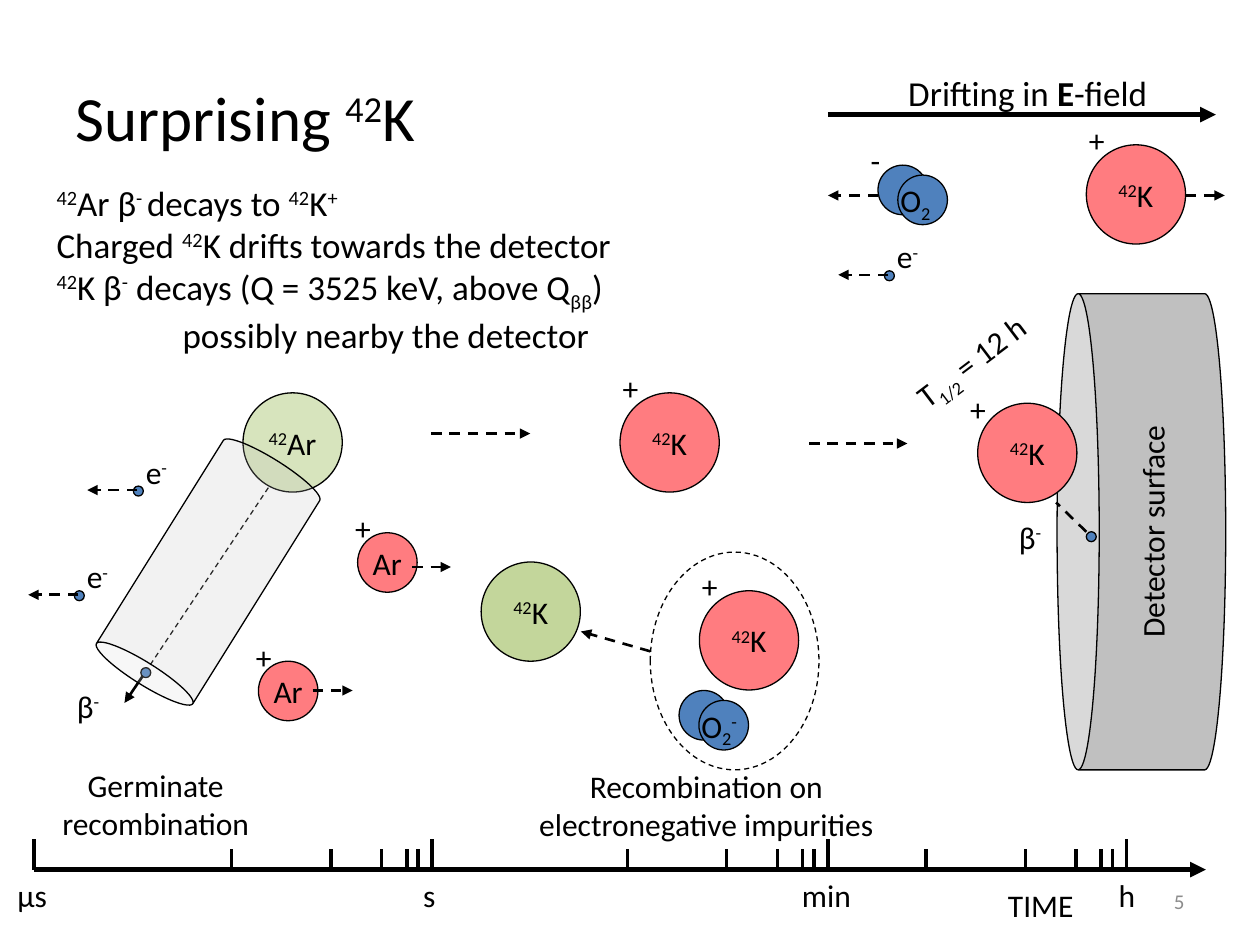
from lxml import etree
from pptx import Presentation
from pptx.dml.color import RGBColor
from pptx.enum.dml import MSO_LINE
from pptx.enum.shapes import MSO_CONNECTOR, MSO_SHAPE
from pptx.enum.text import MSO_ANCHOR, MSO_AUTO_SIZE, PP_ALIGN
from pptx.oxml.ns import qn
from pptx.util import Cm, Pt

LEFT, CENTER, RIGHT = PP_ALIGN.LEFT, PP_ALIGN.CENTER, PP_ALIGN.RIGHT
MIDDLE, TOP = MSO_ANCHOR.MIDDLE, MSO_ANCHOR.TOP
OVAL, CAN = MSO_SHAPE.OVAL, MSO_SHAPE.CAN
DASH = MSO_LINE.DASH

FONT = "Calibri"
BLACK, GREY, SILVER = "000000", "8C8C8C", "C0C0C0"
RED, GREEN, PALE_GREEN, BLUE = "FF7C80", "C3D69B", "D7E4BD", "4F81BD"

# In texts, | separates runs; a run starting with ^ is raised, _ lowered, * bold.
BASELINES = {"^": "30000", "_": "-25000"}
TITLE = "Surprising |^42|K"
DECAY_STEPS = [
    "|^42|Ar β|^- |decays to |^42|K|^+",
    "Charged |^42|K drifts towards the detector",
    "|^42|K β|^-| decays (Q = 3525 keV, above Q|_ββ|)",
    "possibly nearby the detector",
]

# All positions and sizes are in centimetres.
# lines, left, top, width, height, size, alignment, rotation
LABELS = [
    (["TIME"], 20.07, 17.73, 1.85, 1.02, 18, LEFT, 0),
    (["µs"], 0.1, 17.53, 1.12, 1.02, 18, LEFT, 0),
    (["s"], 8.28, 17.53, 0.76, 1.02, 18, LEFT, 0),
    (["min"], 15.9, 17.53, 1.52, 1.02, 18, CENTER, 0),
    (["h"], 22.3, 17.53, 0.86, 1.02, 18, LEFT, 0),
    (["Drifting in |*E|-field"], 18.06, 1.32, 5.41, 1.12, 20, LEFT, 0),
    (["Germinate", "recombination"], 0.89, 15.32, 4.5, 1.78, 18, CENTER, 0),
    (["Recombination on", "electronegative impurities"],
     10.57, 15.34, 7.34, 1.8, 18, CENTER, 0),
    (["-"], 17.3, 2.72, 0.71, 1.02, 18, LEFT, 0),
    (["β|^-"], 1.3, 13.72, 1.02, 1.02, 18, LEFT, 0),
    (["β|^-"], 20.29, 10.31, 1.02, 1.02, 18, LEFT, 0),
    (["T|_1/2| = 12 h"], 18.03, 6.73, 3.18, 1.02, 18, LEFT, 322.9),
]

# label, left, top, diameter, offset of the plus sign
POSITIVE_IONS = [
    ("|^42|K", 19.71, 8.13, 2, (-0.4, -0.4)),
    ("|^42|K", 14.1, 11.91, 2, (-0.2, -0.6)),
    ("|^42|K", 21.9, 2.92, 2, (-0.2, -0.6)),
    ("|^42|K", 12.5, 7.92, 2, (-0.2, -0.6)),
    ("Ar", 5.21, 13.33, 1.2, (-0.3, -0.6)),
    ("Ar", 7.21, 10.74, 1.2, (-0.3, -0.6)),
]
OXYGENS = [("O|_2|^-", 13.69, 13.92, 1.3), ("O|_2", 17.7, 3.33, 1.14)]
ELECTRONS = [(2.69, 9.8), (1.5, 11.91), (17.83, 5.46)]
DRIFTS = [
    (8.69, 8.74, 10.69, 8.74),
    (16.31, 8.94, 18.29, 8.94),
    (23.9, 3.94, 24.69, 3.94),
    (17.7, 3.94, 16.69, 3.94),
    (13.11, 13.13, 11.71, 12.73),
    (8.31, 11.43, 9.09, 11.43),
    (6.3, 13.92, 7.11, 13.92),
]

AXIS_Y = 17.53
MAJOR_TICKS = [0.69, 8.71, 16.69, 22.71]
MINOR_TICKS_BEFORE = [4.04, 2.04, 1.02, 0.51, 0.28]


def rgb(colour):
    return RGBColor.from_string(colour)


def write(frame, lines, size, align=LEFT, anchor=TOP, colour=BLACK):
    """Fill a text frame with marked-up lines."""
    frame.vertical_anchor = anchor
    for number, line in enumerate(lines):
        paragraph = frame.add_paragraph() if number else frame.paragraphs[0]
        paragraph.alignment = align
        paragraph.font.size = Pt(size)
        paragraph.font.name = FONT
        paragraph.font.color.rgb = rgb(colour)
        for part in filter(None, line.split("|")):
            run = paragraph.add_run()
            run.text = part.lstrip("^_*")
            if part[0] in BASELINES:
                run.font._element.set("baseline", BASELINES[part[0]])
            elif part[0] == "*":
                run.font.bold = True


def add_label(shapes, lines, left, top, width, height=1.02, size=18,
              align=LEFT, rotation=0):
    box = shapes.add_textbox(Cm(left), Cm(top), Cm(width), Cm(height))
    box.rotation = rotation
    box.text_frame.word_wrap = False
    box.text_frame.auto_size = MSO_AUTO_SIZE.SHAPE_TO_FIT_TEXT
    write(box.text_frame, lines, size, align)
    return box


def add_body(shapes, kind, left, top, width, height, fill=None, label=""):
    body = shapes.add_shape(kind, Cm(left), Cm(top), Cm(width), Cm(height))
    body.shadow.inherit = False
    if fill:
        body.fill.solid()
        body.fill.fore_color.rgb = rgb(fill)
    else:
        body.fill.background()
    body.line.color.rgb = rgb(BLACK)
    body.line.width = Pt(0.75)
    if label:
        body.text_frame.word_wrap = False
        write(body.text_frame, [label], 18, CENTER, MIDDLE)
    return body


def add_disc(shapes, left, top, diameter, fill, label=""):
    return add_body(shapes, OVAL, left, top, diameter, diameter, fill, label)


def add_line(shapes, x1, y1, x2, y2, width=1.5, dashed=False, arrow=False):
    line = shapes.add_connector(MSO_CONNECTOR.STRAIGHT, Cm(x1), Cm(y1), Cm(x2), Cm(y2))
    line.line.color.rgb = rgb(BLACK)
    line.line.width = Pt(width)
    if dashed:
        line.line.dash_style = DASH
    if arrow:
        etree.SubElement(line.line._get_or_add_ln(), qn("a:tailEnd"), type="triangle")
    etree.SubElement(line._element.spPr, qn("a:effectLst"))


def add_time_axis(shapes):
    add_line(shapes, MAJOR_TICKS[0], AXIS_Y, 24.31, AXIS_Y, 3, arrow=True)
    for x in MAJOR_TICKS:
        add_line(shapes, x, AXIS_Y - 0.61, x, AXIS_Y, 2)
    for major in MAJOR_TICKS[1:]:
        for before in MINOR_TICKS_BEFORE:
            add_line(shapes, major - before, AXIS_Y - 0.41, major - before, AXIS_Y, 2)


def add_particles(shapes):
    for label, left, top, diameter, (dx, dy) in POSITIVE_IONS:
        ion = shapes.add_group_shape().shapes
        add_disc(ion, left, top, diameter, RED, label)
        add_label(ion, ["+"], left + dx, top + dy, 0.85)
    for label, left, top, width in OXYGENS:
        molecule = shapes.add_group_shape().shapes
        add_disc(molecule, left, top, 1, BLUE)
        add_disc(molecule, left + 0.4, top + 0.2, 1, BLUE)
        add_label(molecule, [label], left + 0.2, top + 0.2, width)
    for left, top in ELECTRONS:
        electron = shapes.add_group_shape().shapes
        add_disc(electron, left, top, 0.2, BLUE)
        add_label(electron, ["e|^-"], left, top - 0.8, 0.97)
        add_line(shapes, left + 0.08, top + 0.08, left - 0.93, top + 0.08,
                 dashed=True, arrow=True)


def add_decay_track(shapes):
    """Beta track of the argon decay inside its ionisation cylinder."""
    add_line(shapes, 5.51, 9.68, 2.97, 13.49, 0.75, dashed=True)
    add_line(shapes, 2.97, 13.49, 2.51, 14.17, arrow=True)
    add_disc(shapes, 2.84, 13.46, 0.2, BLUE)
    add_disc(shapes, 4.9, 7.92, 2, PALE_GREEN, "|^42|Ar")
    cylinder = add_body(shapes, CAN, 3.05, 8.89, 2.29, 5.28, SILVER)
    cylinder.adjustments[0] = 0.197
    cylinder.rotation = 212
    colour = cylinder._element.spPr.find(qn("a:solidFill"))[0]
    etree.SubElement(colour, qn("a:alpha"), val="20000")


def main():
    prs = Presentation()
    prs.slide_width, prs.slide_height = Cm(25.4), Cm(19.05)
    slide = prs.slides.add_slide(prs.slide_layouts[5])
    shapes = slide.shapes

    title = shapes.title
    title.left, title.top, title.width, title.height = Cm(1.27), Cm(0.76), Cm(22.86), Cm(3.18)
    write(title.text_frame, [TITLE], 36, LEFT, MIDDLE)

    page = shapes.add_textbox(Cm(18.21), Cm(17.65), Cm(5.92), Cm(1.02))
    page.text_frame.word_wrap = True
    write(page.text_frame, ["5"], 12, RIGHT, MIDDLE, GREY)

    add_time_axis(shapes)
    add_line(shapes, 16.69, 2.31, 24.51, 2.31, 3, arrow=True)

    detector = add_body(shapes, CAN, 18.21, 9.02, 9.6, 3.4, SILVER, "Detector surface")
    detector.adjustments[0] = 0.25
    detector.rotation = 270
    add_line(shapes, 21.9, 10.72, 21.29, 10.13, dashed=True)
    add_disc(shapes, 21.9, 10.72, 0.2, BLUE)

    add_disc(shapes, 9.7, 11.33, 2, GREEN, "|^42|K")
    add_particles(shapes)
    recombination = add_body(shapes, OVAL, 13.11, 11.13, 3.4, 4.39)
    recombination.line.dash_style = DASH
    for drift in DRIFTS:
        add_line(shapes, *drift, dashed=True, arrow=True)

    for label in LABELS:
        add_label(shapes, *label)
    steps = add_label(shapes, DECAY_STEPS, 0.89, 3.53, 11.86, 3.68, 20)
    steps.text_frame.paragraphs[-1]._p.get_or_add_pPr().set("marL", str(Cm(2.54)))
    add_decay_track(shapes)

    prs.save("out.pptx")


if __name__ == "__main__":
    main()
